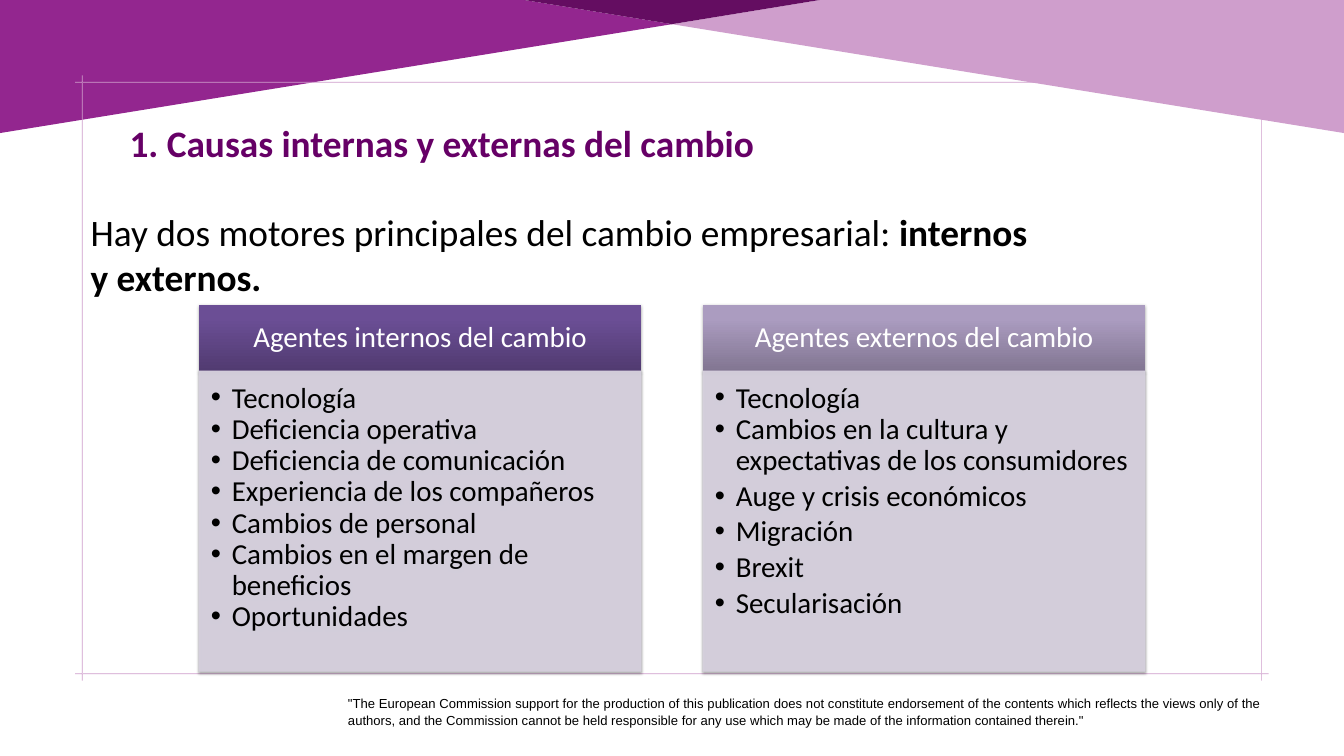
import pptx
import pptx.dml.color
import pptx.enum.text
import pptx.oxml.ns
import pptx.util
from copy import deepcopy
from lxml import etree
from pptx.util import Inches

HEADING = "1. Causas internas y externas del cambio"
INTRO = [("Hay dos motores principales del cambio empresarial: ", False), ("internos y externos.", True)]
DISCLAIMER = (
    '"The European Commission support for the production of this publication does not constitute '
    "endorsement of the contents which reflects the views only of the authors, and the Commission "
    'cannot be held responsible for any use which may be made of the information contained therein."'
)
AGENTS = [
    {
        "title": "Agentes internos del cambio",
        "gradient": ["513B71", "6B4E95", "6B4D96"],
        "causes": [
            "Tecnología",
            "Deficiencia operativa",
            "Deficiencia de comunicación",
            "Experiencia de los compañeros",
            "Cambios de personal",
            "Cambios en el margen de beneficios",
            "Oportunidades",
        ],
        "spaced_from": 7,
    },
    {
        "title": "Agentes externos del cambio",
        "gradient": ["827692", "AB9CC0", "AC9DC1"],
        "causes": [
            "Tecnología",
            "Cambios en la cultura y expectativas de los consumidores",
            "Auge y crisis económicos",
            "Migración",
            "Brexit",
            "Secularisación",
        ],
        "spaced_from": 2,
    },
]
THEME = {
    "purple": "93268F", "lilac": "CF9ECC", "plum": "640D61",
    "heading": "660066", "text": "000000", "header_text": "FFFFFF", "panel": "D7D1DF",
    "font": "Calibri", "small_font": "Arial",
    "large": 40, "medium": 31, "small": 14,
}
BANNERS = [
    ("purple", [(0, 1.98), (0, 0), (7.8, 0), (10, 0.36)]),
    ("lilac", [(20, 1.98), (10, 0.36), (12.2, 0), (20, 0)]),
    ("plum", [(10, 0.36), (7.8, 0), (12.2, 0)]),
]
FRAME = {"left": 1.22, "top": 1.22, "right": 18.78, "bottom": 10.03, "overhang": 0.1, "thickness": 0.01}
COLUMN = {"left": 2.96, "top": 4.54, "width": 6.58, "step": 7.5, "header": 0.98, "body": 4.47}
STOPS = [0, 0.8, 1]


def rgb(value):
    return pptx.dml.color.RGBColor.from_string(value)


def add_outline(slide, contours, color):
    start, *rest = contours
    builder = slide.shapes.build_freeform(Inches(start[0][0]), Inches(start[0][1]), scale=1.0)
    builder.add_line_segments([(Inches(x), Inches(y)) for x, y in start[1:]])
    for contour in rest:
        builder.move_to(Inches(contour[0][0]), Inches(contour[0][1]))
        builder.add_line_segments([(Inches(x), Inches(y)) for x, y in contour[1:]])
    outline = builder.convert_to_shape()
    outline.shadow.inherit = False
    outline.fill.solid()
    outline.fill.fore_color.rgb = rgb(THEME[color])
    outline.line.fill.background()


def box(x, y, width, height):
    return [(x, y), (x + width, y), (x + width, y + height), (x, y + height)]


def frame_contours():
    thick, over = FRAME["thickness"], FRAME["overhang"]
    left, top = FRAME["left"] - over, FRAME["top"] - over
    width = FRAME["right"] + over - left
    height = FRAME["bottom"] + over - top
    rows = [box(left, y, width, thick) for y in (FRAME["top"], FRAME["bottom"] - thick)]
    sides = [box(x, top, thick, height) for x in (FRAME["left"], FRAME["right"] - thick)]
    return [contour + contour[:1] for contour in rows + sides]


def style(paragraph, size, color, font="font", bold=None):
    paragraph.font.size = pptx.util.Pt(THEME[size])
    paragraph.font.name = THEME[font]
    paragraph.font.color.rgb = rgb(THEME[color])
    paragraph.font.bold = bold


def add_text(slide, left, top, width, height):
    frame = slide.shapes.add_textbox(*map(Inches, (left, top, width, height))).text_frame
    frame.word_wrap = True
    return frame.paragraphs[0]


def child(parent, tag, **attributes):
    return etree.SubElement(parent, pptx.oxml.ns.qn(tag), attributes)


def add_panel(slide, left, top, height, margins):
    panel = slide.shapes.add_shape(
        pptx.enum.shapes.MSO_SHAPE.RECTANGLE, *map(Inches, (left, top, COLUMN["width"], height))
    )
    panel.shadow.inherit = False
    effects = panel._element.spPr.find(pptx.oxml.ns.qn("a:effectLst"))
    shadow = child(effects, "a:outerShdw", blurRad="39370", dist="22860", dir="5400000", rotWithShape="0")
    child(child(shadow, "a:srgbClr", val=THEME["text"]), "a:alpha", val="35000")
    frame = panel.text_frame
    frame.word_wrap = True
    frame.margin_left, frame.margin_top, frame.margin_right, frame.margin_bottom = map(Inches, margins)
    return panel


def add_header(slide, left, agent):
    header = add_panel(slide, left, COLUMN["top"], COLUMN["header"], (0.24, 0.14, 0.24, 0.14))
    header.line.fill.background()
    header.fill.gradient()
    header.fill.gradient_angle = 90
    stop_list = header._element.spPr.find(".//" + pptx.oxml.ns.qn("a:gsLst"))
    stop_list.append(deepcopy(stop_list[-1]))
    for stop, position, color in zip(header.fill.gradient_stops, STOPS, agent["gradient"]):
        stop.position = position
        stop.color.rgb = rgb(color)
    header.text_frame.vertical_anchor = pptx.enum.text.MSO_ANCHOR.MIDDLE
    title = header.text_frame.paragraphs[0]
    title.text = agent["title"]
    title.alignment = pptx.enum.text.PP_ALIGN.CENTER
    title.line_spacing = 0.9
    style(title, "medium", "header_text")


def add_causes(slide, left, agent):
    body = add_panel(slide, left, COLUMN["top"] + COLUMN["header"], COLUMN["body"], (0.18, 0.18, 0.24, 0.27))
    body.fill.solid()
    body.line.width = pptx.util.Pt(0.75)
    for paint in (body.fill, body.line.fill):
        paint.solid()
        paint.fore_color.rgb = rgb(THEME["panel"])
    for color in body._element.spPr.iter(pptx.oxml.ns.qn("a:srgbClr")):
        if color.get("val") == THEME["panel"]:
            child(color, "a:alpha", val="90000")
    frame = body.text_frame
    frame.vertical_anchor = pptx.enum.text.MSO_ANCHOR.TOP
    for index, cause in enumerate(agent["causes"]):
        item = frame.add_paragraph() if index else frame.paragraphs[0]
        item.text = cause
        item.level = 1
        item.alignment = pptx.enum.text.PP_ALIGN.LEFT
        item.line_spacing = 0.9
        if index >= agent["spaced_from"]:
            item.space_before = pptx.util.Pt(4.7)
        properties = item._p.get_or_add_pPr()
        properties.set("marL", str(Inches(0.31)))
        properties.set("indent", str(Inches(-0.31)))
        child(child(properties, "a:buClr"), "a:srgbClr", val=THEME["text"])
        child(properties, "a:buFont", typeface=THEME["small_font"])
        child(properties, "a:buChar", char="•")
        style(item, "medium", "text")


def main():
    """Build the slide on internal and external causes of change."""
    deck = pptx.Presentation()
    deck.slide_width, deck.slide_height = Inches(20), Inches(11.25)
    slide = deck.slides.add_slide(deck.slide_layouts[6])

    for color, corners in BANNERS:
        add_outline(slide, [corners + corners[:1]], color)
    add_outline(slide, frame_contours(), "lilac")

    disclaimer = add_text(slide, 5.08, 10.29, 13.79, 0.52)
    disclaimer.text = DISCLAIMER
    disclaimer.alignment = pptx.enum.text.PP_ALIGN.JUSTIFY
    disclaimer.line_spacing = 1.07
    style(disclaimer, "small", "text", "small_font")

    heading = add_text(slide, 1.83, 1.74, 13.25, 0.77)
    heading.text = HEADING
    style(heading, "large", "heading", bold=True)

    intro = add_text(slide, 1.25, 3.06, 14.42, 1.45)
    for words, bold in INTRO:
        run = intro.add_run()
        run.text = words
        run.font.bold = bold
    style(intro, "large", "text")

    for index, agent in enumerate(AGENTS):
        left = COLUMN["left"] + index * COLUMN["step"]
        add_header(slide, left, agent)
        add_causes(slide, left, agent)

    deck.save("out.pptx")


if __name__ == "__main__":
    main()
